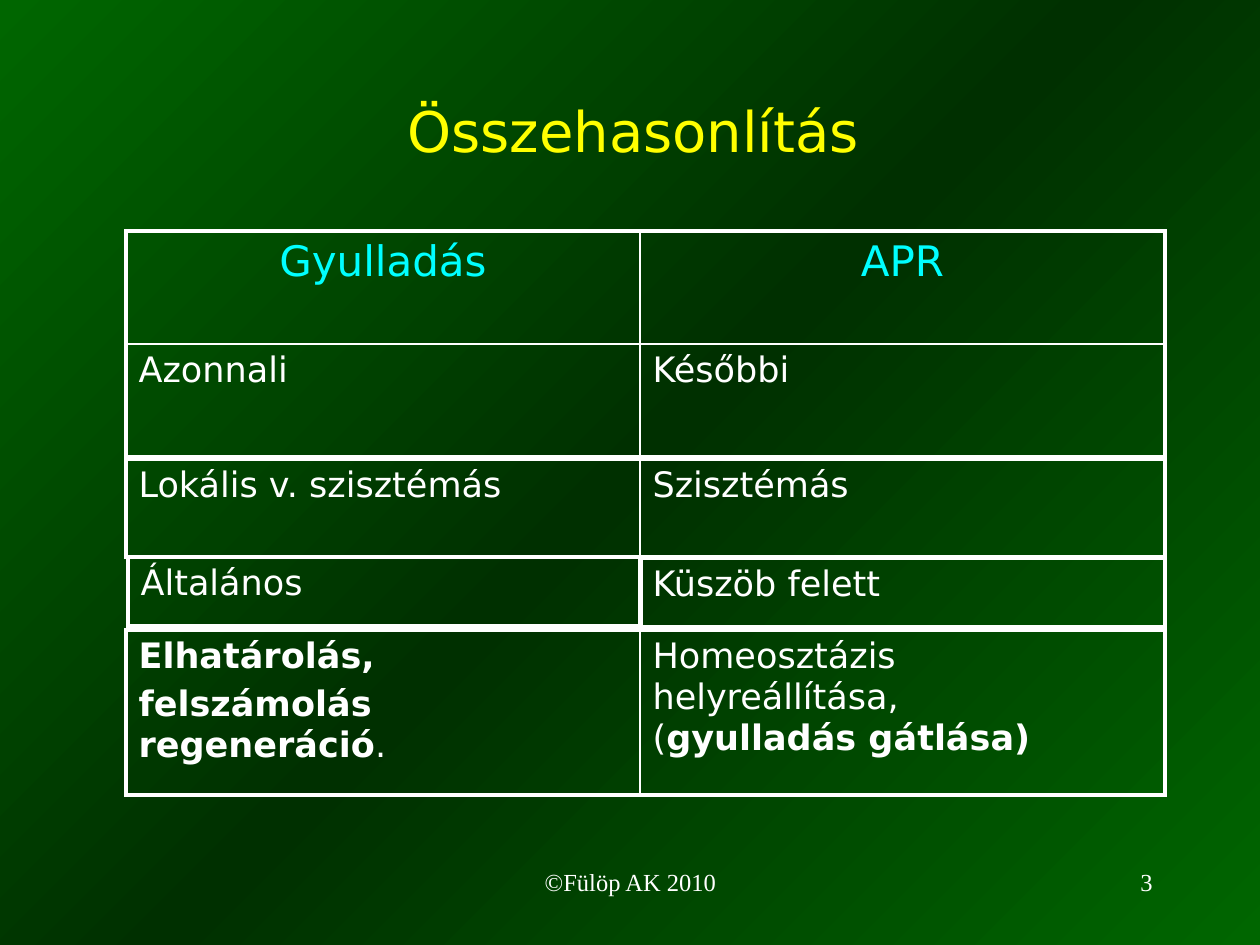
from copy import deepcopy
from lxml.etree import SubElement
from pptx import Presentation
from pptx.dml.color import RGBColor
from pptx.enum.text import MSO_ANCHOR, PP_ALIGN
from pptx.oxml import parse_xml
from pptx.oxml.ns import nsdecls
from pptx.util import Pt

PX = 914400 / 126
SANS, SERIF = "DejaVu Sans", "Times New Roman"
WHITE, CYAN, YELLOW = "FFFFFF", "00FFFF", "FFFF00"
THICK, THIN = 28575, 12700


def px(*nums):
    return [round(n * PX) for n in nums]


def write(para, text, size, color, font=SANS, bold=False):
    run = para.add_run()
    run.text = text
    run.font.size = Pt(size)
    run.font.name = font
    run.font.bold = bold
    run.font.color.rgb = RGBColor.from_string(color)


prs = Presentation()
prs.slide_width, prs.slide_height = px(1260, 945)
slide = prs.slides.add_slide(prs.slide_layouts[5])

# Background: dark band between two green corners
fill = slide.background.fill
fill.gradient()
fill.gradient_angle = 315
first, last = fill.gradient_stops
first.color.rgb = last.color.rgb = RGBColor.from_string("006600")
first.position, last.position = 0, 1
stops = slide.background._cSld.find(".//{*}gsLst")
stops.insert(1, deepcopy(stops[0]))
mid = fill.gradient_stops[1]
mid.position = 0.5
mid.color.rgb = RGBColor.from_string("003000")

# Title
title = slide.shapes.title
title.left, title.top, title.width, title.height = px(98, 52, 1071, 157)
title.text_frame.vertical_anchor = MSO_ANCHOR.MIDDLE
para = title.text_frame.paragraphs[0]
para.alignment = PP_ALIGN.CENTER
write(para, "Összehasonlítás", 32, YELLOW)

# Footer and page number
for text, left, width, align in [
    ("©Fülöp AK 2010", 431, 399, PP_ALIGN.CENTER),
    ("3", 903, 262, PP_ALIGN.RIGHT),
]:
    frame = slide.shapes.add_textbox(*px(left, 861, width, 63)).text_frame
    frame.word_wrap = True
    para = frame.paragraphs[0]
    para.alignment = align
    write(para, text, 14, WHITE, SERIF)

# Tables: left, top, column widths, row height, rows of cells;
# a cell is a list of paragraphs, each a list of (text, bold) runs
COLS = [514, 525]
tables = [
    (126, 231, COLS, 113, [
        [[[("Gyulladás", False)]], [[("APR", False)]]],
        [[[("Azonnali", False)]], [[("Későbbi", False)]]],
    ]),
    (126, 459, COLS, 98, [
        [[[("Lokális v. szisztémás", False)]], [[("Szisztémás", False)]]],
    ]),
    (128, 557, [513], 69, [[[[("Általános", False)]]]]),
    (126, 630, COLS, 165, [
        [[[("Elhatárolás,", True)],
          [("felszámolás regeneráció", True), (".", False)]],
         [[("Homeosztázis helyreállítása,", False), ("\n", False),
           ("(", False), ("gyulladás gátlása)", True)]]],
    ]),
    (640, 558, [525], 69, [[[[("Küszöb felett", False)]]]]),
]

for left, top, cols, high, rows in tables:
    box = px(left, top, sum(cols), high * len(rows))
    table = slide.shapes.add_table(len(rows), len(cols), *box).table
    table.first_row = table.horz_banding = False
    for col, width in zip(table.columns, cols):
        col.width = px(width)[0]
    for r, row in enumerate(rows):
        table.rows[r].height = px(high)[0]
        for c, paras in enumerate(row):
            cell = table.cell(r, c)
            cell.fill.background()
            head = len(rows) > 1 and r == 0

            # Text
            frame = cell.text_frame
            for i, runs in enumerate(paras):
                para = frame.add_paragraph() if i else frame.paragraphs[0]
                para.alignment = PP_ALIGN.CENTER if head else PP_ALIGN.LEFT
                para.space_before = Pt(5 if head else 4)
                for text, bold in runs:
                    if text == "\n":
                        para.add_line_break()
                    else:
                        write(para, text, 24 if head else 20,
                              CYAN if head else WHITE, bold=bold)

            # Borders: thick outside, thin inside
            outer = {"L": c == 0, "R": c == len(cols) - 1,
                     "T": r == 0, "B": r == len(rows) - 1}
            props = cell._tc.get_or_add_tcPr()
            for i, (side, edge) in enumerate(outer.items()):
                line = parse_xml(f'<a:ln{side} {nsdecls("a")}/>')
                line.set("w", str(THICK if edge else THIN))
                space = "{%s}" % line.nsmap["a"]
                paint = SubElement(line, space + "solidFill")
                SubElement(paint, space + "srgbClr", val=WHITE)
                props.insert(i, line)

prs.save("out.pptx")
